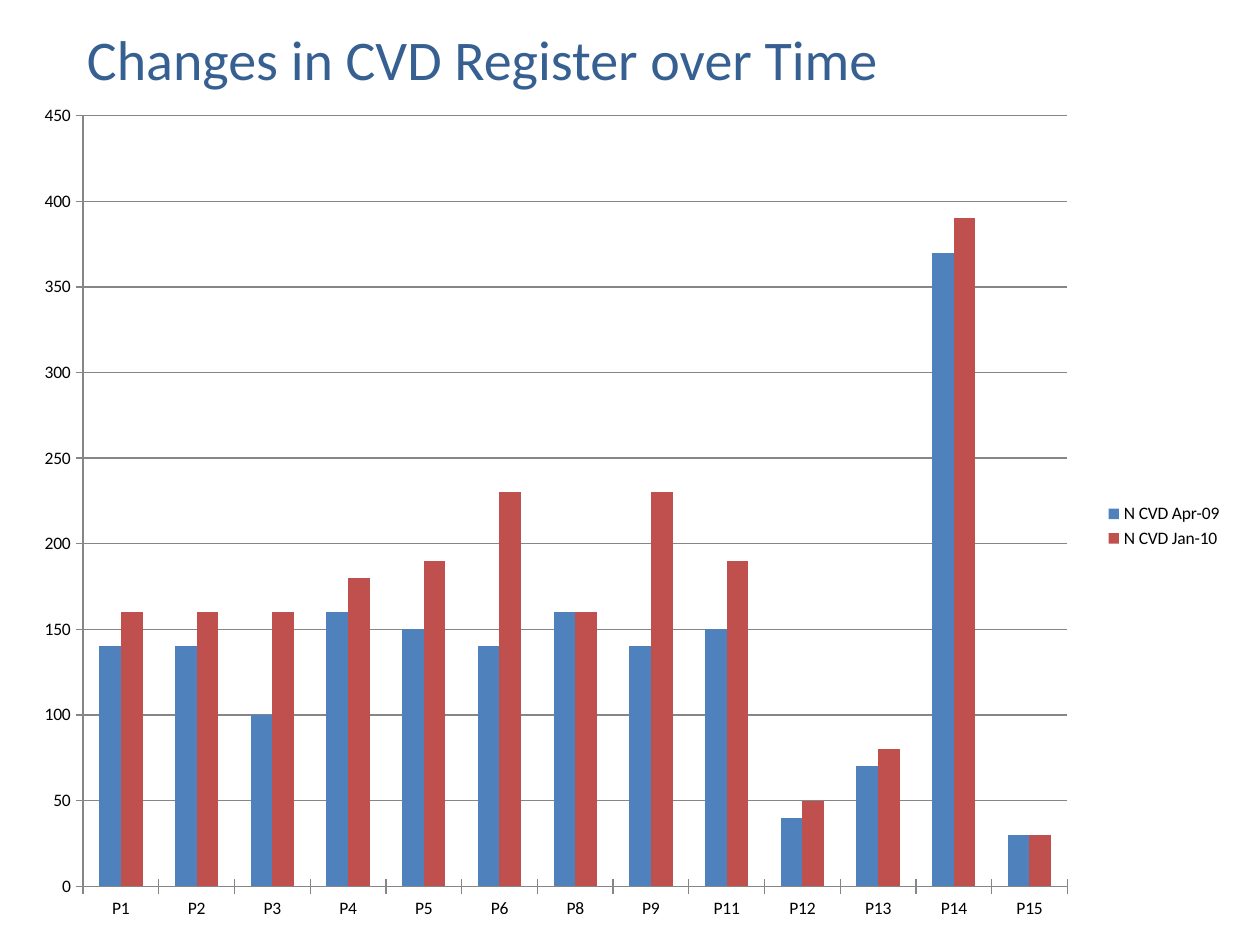
"""Build the slide comparing CVD register sizes per practice at two dates."""
from dataclasses import dataclass

import pptx
import pptx.chart.axis
import pptx.chart.chart
import pptx.chart.data
import pptx.dml.color
import pptx.enum.chart
import pptx.enum.text
import pptx.oxml
import pptx.oxml.ns
import pptx.util
from pptx.util import Pt


@dataclass(frozen=True)
class Theme:
    """Colours, font and type sizes of the slide."""

    font: str = "Calibri"
    title: str = "376092"
    label: str = "000000"
    rule: str = "868686"
    title_size: int = 32
    label_size: int = 10


@dataclass(frozen=True)
class Box:
    """A rectangle in points, or in fractions of the chart."""

    left: float
    top: float
    width: float
    height: float

    def points(self) -> tuple[pptx.util.Length, ...]:
        """Return the four sides as lengths."""
        return Pt(self.left), Pt(self.top), Pt(self.width), Pt(self.height)


@dataclass(frozen=True)
class Register:
    """Patients on the register of each practice at one date."""

    name: str
    color: str
    counts: tuple[int, ...]


THEME = Theme()
TITLE_BOX = Box(42.5, 0, 648, 66)
CHART_BOX = Box(20, 60.5, 686, 479.5)
PLOT_BOX = Box(0.04, 0.01, 0.82, 0.92)
PRACTICES = [f"P{number}" for number in (*range(1, 7), 8, 9, *range(11, 16))]
REGISTERS = (
    Register("N CVD Apr-09", "4F81BD",
             (140, 140, 100, 160, 150, 140, 160, 140, 150, 40, 70, 370, 30)),
    Register("N CVD Jan-10", "C0504D",
             (160, 160, 160, 180, 190, 230, 160, 230, 190, 50, 80, 390, 30)),
)


def rgb(color: str) -> pptx.dml.color.RGBColor:
    """Turn a hex string into a colour."""
    return pptx.dml.color.RGBColor.from_string(color)


def style_font(font: pptx.text.text.Font, size: int, color: str) -> None:
    """Apply the theme font with a size and colour."""
    font.name = THEME.font
    font.size = Pt(size)
    font.bold = False
    font.color.rgb = rgb(color)


def style_axis(axis: pptx.chart.axis._BaseAxis) -> None:
    """Give an axis crossing ticks and a thin line."""
    axis.major_tick_mark = pptx.enum.chart.XL_TICK_MARK.CROSS
    axis.minor_tick_mark = pptx.enum.chart.XL_TICK_MARK.NONE
    axis.format.line.color.rgb = rgb(THEME.rule)
    axis.format.line.width = Pt(0.75)


def place_plot(chart: pptx.chart.chart.Chart, box: Box) -> None:
    """Fix the inner plot area to fractions of the chart."""
    area = chart.element.chart.plotArea
    for layout in area.findall(pptx.oxml.ns.qn("c:layout")):
        area.remove(layout)
    area.insert(0, pptx.oxml.parse_xml(
        f'<c:layout {pptx.oxml.ns.nsdecls("c")}><c:manualLayout>'
        '<c:layoutTarget val="inner"/><c:xMode val="edge"/><c:yMode val="edge"/>'
        f'<c:x val="{box.left}"/><c:y val="{box.top}"/>'
        f'<c:w val="{box.width}"/><c:h val="{box.height}"/>'
        "</c:manualLayout></c:layout>"))


def add_title(slide: pptx.slide.Slide, wording: str) -> None:
    """Fill and place the title placeholder."""
    title = slide.shapes.title
    title.left, title.top, title.width, title.height = TITLE_BOX.points()
    title.text_frame.text = wording
    title.text_frame.vertical_anchor = pptx.enum.text.MSO_ANCHOR.MIDDLE
    heading = title.text_frame.paragraphs[0]
    heading.alignment = pptx.enum.text.PP_ALIGN.LEFT
    style_font(heading.runs[0].font, THEME.title_size, THEME.title)


def add_register_chart(slide: pptx.slide.Slide) -> None:
    """Draw the registers as clustered columns."""
    figures = pptx.chart.data.CategoryChartData()
    figures.categories = PRACTICES
    for register in REGISTERS:
        figures.add_series(register.name, register.counts)
    chart = slide.shapes.add_chart(
        pptx.enum.chart.XL_CHART_TYPE.COLUMN_CLUSTERED,
        *CHART_BOX.points(), figures).chart
    style_font(chart.font, THEME.label_size, THEME.label)
    chart.has_title = False
    chart.has_legend = True
    chart.legend.position = pptx.enum.chart.XL_LEGEND_POSITION.RIGHT
    chart.legend.include_in_layout = False

    columns = chart.plots[0]
    columns.vary_by_categories = False
    columns.gap_width = 150
    columns.overlap = 0
    for series, register in zip(columns.series, REGISTERS):
        series.format.fill.solid()
        series.format.fill.fore_color.rgb = rgb(register.color)

    patients = chart.value_axis
    style_axis(chart.category_axis)
    style_axis(patients)
    patients.minimum_scale, patients.maximum_scale = 0, 450
    patients.major_unit = 50
    patients.has_major_gridlines = True
    patients.major_gridlines.format.line.color.rgb = rgb(THEME.rule)
    patients.major_gridlines.format.line.width = Pt(0.75)
    place_plot(chart, PLOT_BOX)


def main() -> None:
    """Build and save the presentation."""
    deck = pptx.Presentation()
    deck.slide_width, deck.slide_height = Pt(720), Pt(540)
    slide = deck.slides.add_slide(deck.slide_layouts.get_by_name("Title Only"))
    add_title(slide, "Changes in CVD Register over Time")
    add_register_chart(slide)
    deck.save("out.pptx")


if __name__ == "__main__":
    main()
